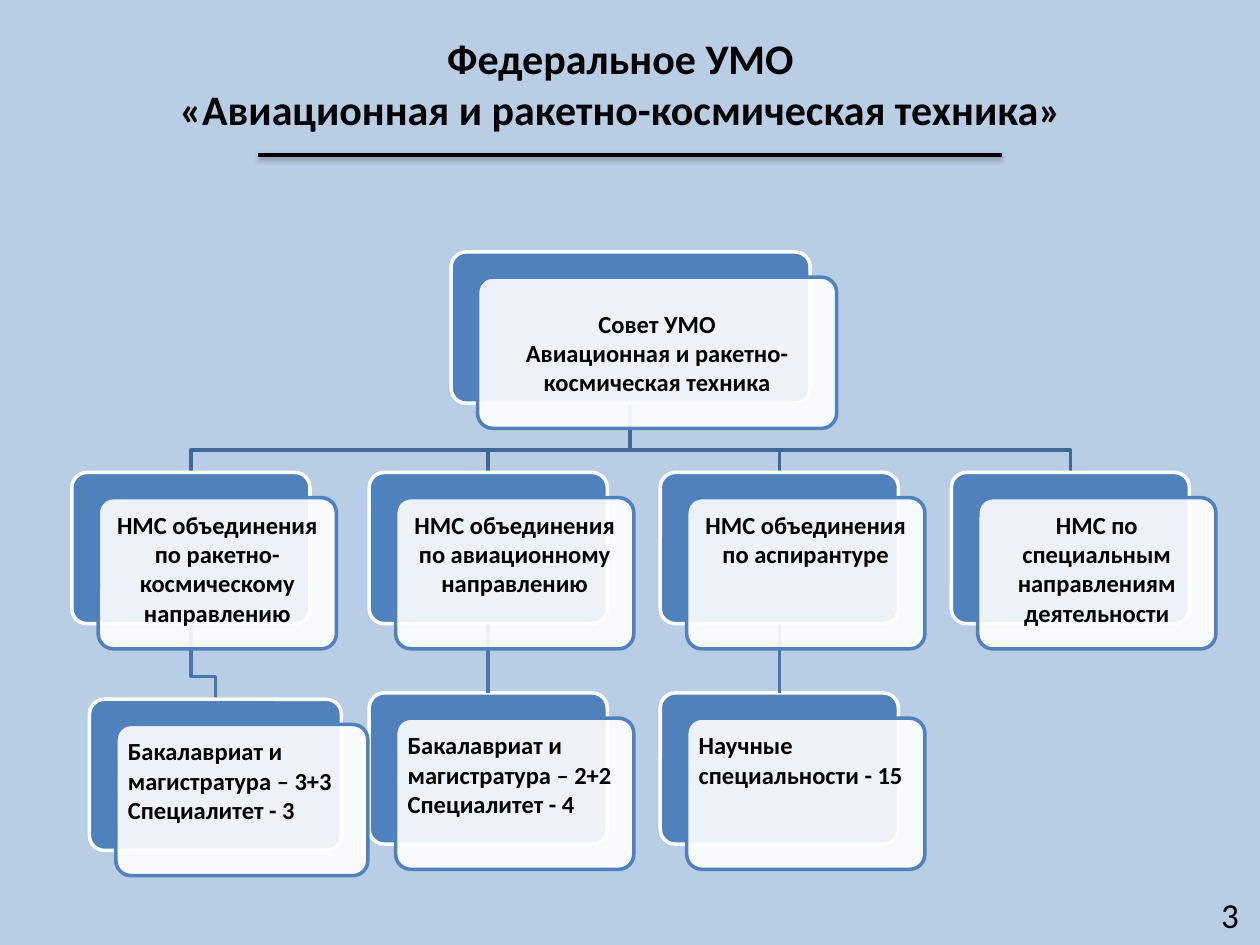
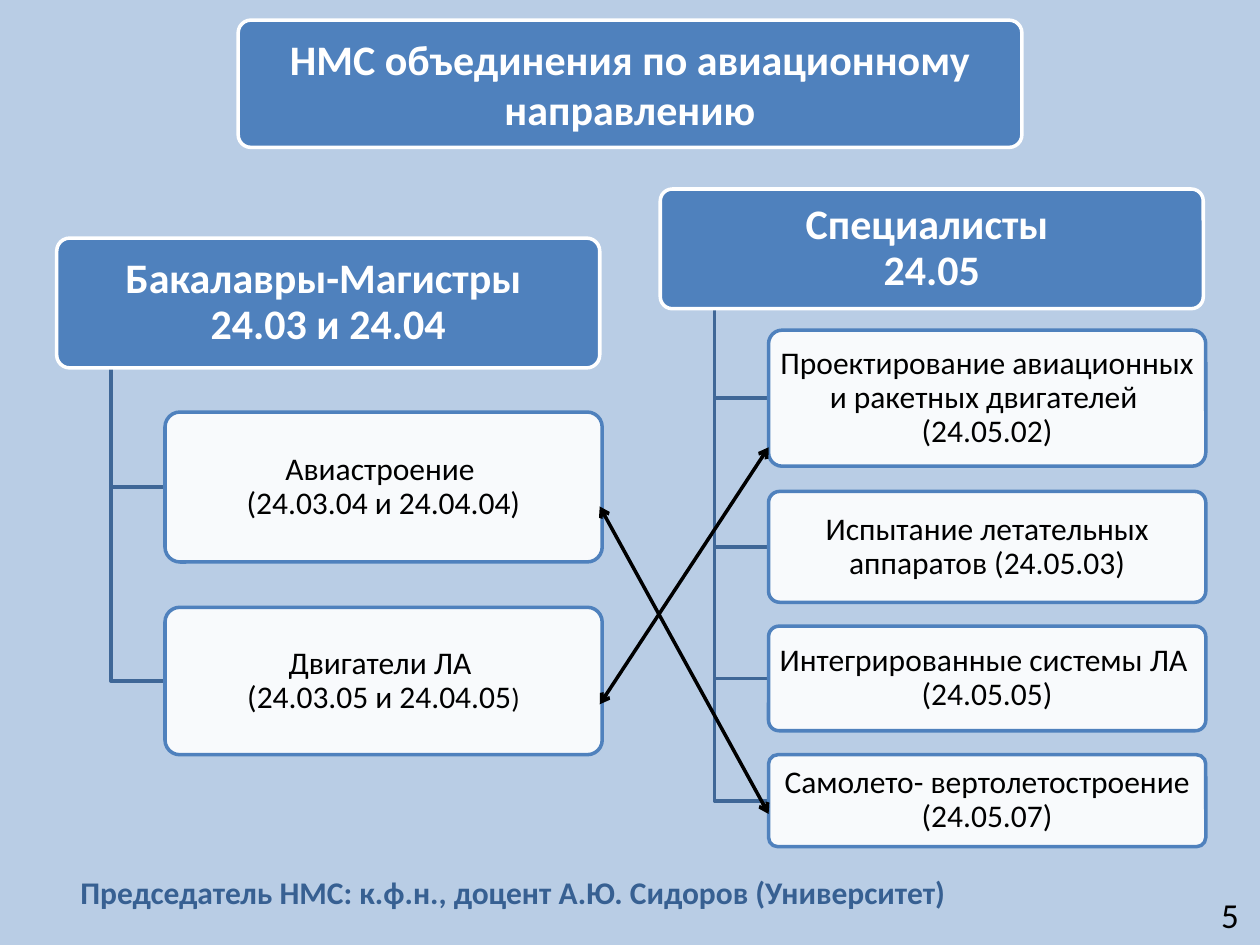
import pptx
import pptx.util
import pptx.oxml
import pptx.oxml.ns
import pptx.dml.color
import pptx.enum.shapes
import pptx.enum.text

Inches, Pt = pptx.util.Inches, pptx.util.Pt
RGB = pptx.dml.color.RGBColor.from_string
ALIGN = pptx.enum.text.PP_ALIGN
ANCHOR = pptx.enum.text.MSO_ANCHOR
STRAIGHT = pptx.enum.shapes.MSO_CONNECTOR.STRAIGHT
NS = pptx.oxml.ns.nsdecls("a")

COLORS = {
    "background": "B9CDE5",
    "blue": "4F81BD",
    "trunk": "3F6797",
    "link": "4875AC",
    "chair": "376092",
    "white": "FFFFFF",
    "black": "000000",
}


def write(s, text, size, color="black", bold=False, align=ALIGN.CENTER,
          anchor=ANCHOR.MIDDLE, inset=(0.1, 0.05), spacing=1.0):
    """Set the text of s; a vertical tab in text is a line break."""
    tf = s.text_frame
    tf.text = text
    tf.word_wrap = True
    tf.vertical_anchor = anchor
    tf.margin_left = tf.margin_right = Inches(inset[0])
    tf.margin_top = tf.margin_bottom = Inches(inset[1])
    p = tf.paragraphs[0]
    p.alignment = align
    p.line_spacing = spacing
    for r in p.runs:
        r.font.name = "Calibri"
        r.font.size = Pt(size)
        r.font.bold = bold
        r.font.color.rgb = RGB(COLORS[color])


def add_box(slide, left, top, width, height, solid):
    """Add a rounded box: solid blue with a white edge, or pale with a blue edge."""
    fill, edge = ("blue", "white") if solid else ("white", "blue")
    s = slide.shapes.add_shape(pptx.enum.shapes.MSO_SHAPE.ROUNDED_RECTANGLE,
                               Inches(left), Inches(top), Inches(width), Inches(height))
    s.adjustments[0] = 0.1
    s.shadow.inherit = False
    s.fill.solid()
    s.fill.fore_color.rgb = RGB(COLORS[fill])
    s.line.color.rgb = RGB(COLORS[edge])
    s.line.width = Pt(2)
    if not solid:
        color = s._element.spPr.find(pptx.oxml.ns.qn("a:solidFill"))[0]
        color.append(pptx.oxml.parse_xml(f'<a:alpha {NS} val="90000"/>'))
    return s


prs = pptx.Presentation()
prs.slide_width, prs.slide_height = Inches(10), Inches(7.5)
structure, aviation = [prs.slides.add_slide(prs.slide_layouts[6]) for _ in range(2)]

# Background and page number
for slide, number in ((structure, "3"), (aviation, "5")):
    slide.background.fill.solid()
    slide.background.fill.fore_color.rgb = RGB(COLORS["background"])
    s = slide.shapes.add_textbox(Inches(7.6), Inches(7.06), Inches(2.33), Inches(0.4))
    write(s, number, 20, align=ALIGN.RIGHT)

# Contents of the structure slide
CARD_W, CARD_H, CARD_SHIFT = 1.89, 1.2, 0.2
COUNCIL_BOTTOM, COUNCIL_TOP, TEAM_TOP = 3.2, 2, 3.75
council = (3.58, COUNCIL_TOP, 2.85, "Совет УМО\vАвиационная и ракетно-космическая техника")
teams = [
    (0.57, "НМС объединения по ракетно-космическому направлению"),
    (2.93, "НМС объединения по авиационному направлению"),
    (5.24, "НМС объединения по аспирантуре"),
    (7.55, "НМС по специальным направлениям деятельности"),
]
programs = [
    (0.71, 5.55, 2, "Бакалавриат и магистратура – 3+3\vСпециалитет - 3"),
    (2.93, 5.5, CARD_W, "Бакалавриат и магистратура – 2+2\vСпециалитет - 4"),
    (5.24, 5.5, CARD_W, "Научные специальности - 15"),
]

# Contents of the aviation slide: header box, then (top, height, text) of its branches
trees = [
    ((5.24, 1.5, 0.95, "Специалисты \v24.05"), [
        (2.62, 1.08, "Проектирование авиационных и ракетных двигателей \v(24.05.02)"),
        (3.9, 0.88, "Испытание летательных аппаратов (24.05.03)"),
        (4.97, 0.83, "Интегрированные системы ЛА \v(24.05.05)"),
        (5.99, 0.73, "Самолето- вертолетостроение (24.05.07)"),
    ]),
    ((0.45, 1.89, 1.03, "Бакалавры-Магистры \v24.03 и 24.04"), [
        (3.27, 1.19, "Авиастроение \v(24.03.04 и 24.04.04)"),
        (4.82, 1.17, "Двигатели ЛА \v(24.03.05 и 24.04.05"),
    ]),
]
HEADER_W, BRANCH_W, TRUNK_X, BRANCH_X = 4.31, 3.47, 0.43, 0.86

# Elbow lines of both slides
elbows = []
for left, _ in teams:
    x = left + CARD_W / 2
    elbows.append((structure, "trunk", [(5, COUNCIL_BOTTOM), (5, 3.57), (x, 3.57), (x, TEAM_TOP)]))
start_x, end_x = teams[0][0] + CARD_W / 2, programs[0][0] + programs[0][2] / 2
elbows.append((structure, "link", [(start_x, TEAM_TOP + CARD_H), (start_x, 5.37),
                                   (end_x, 5.37), (end_x, programs[0][1])]))
for (left, top, height, _), branches in trees:
    x = left + TRUNK_X
    for branch_top, branch_height, _ in branches:
        y = branch_top + branch_height / 2
        elbows.append((aviation, "trunk", [(x, top + height), (x, y), (left + BRANCH_X, y)]))
for slide, color, points in elbows:
    points = [(Inches(x), Inches(y)) for x, y in points]
    builder = slide.shapes.build_freeform(*points[0])
    builder.add_line_segments(points[1:], close=False)
    s = builder.convert_to_shape()
    s.shadow.inherit = False
    s.fill.background()
    s.line.color.rgb = RGB(COLORS[color])
    s.line.width = Pt(2)

# Structure slide: title and rule
s = structure.shapes.add_textbox(Inches(0.91), Inches(0.21), Inches(8.03), Inches(0.91))
write(s, "Федеральное УМО\v«Авиационная и ракетно-космическая техника»", 24, bold=True,
      anchor=ANCHOR.TOP)
rule = structure.shapes.add_connector(STRAIGHT, Inches(2.05), Inches(1.23),
                                      Inches(7.95), Inches(1.23))
rule.line.color.rgb = RGB(COLORS["black"])
rule.line.width = Pt(2)
rule._element.spPr.append(pptx.oxml.parse_xml(
    f'<a:effectLst {NS}><a:outerShdw blurRad="{Pt(3.1)}" dist="{Pt(1.6)}" dir="5400000" '
    f'rotWithShape="0"><a:srgbClr val="{COLORS["black"]}"><a:alpha val="38000"/>'
    '</a:srgbClr></a:outerShdw></a:effectLst>'))

# Structure slide: blue backs, links between them, then pale fronts with the text
cards = [(*council, ALIGN.CENTER, ANCHOR.MIDDLE)]
cards += [(left, TEAM_TOP, CARD_W, text, ALIGN.CENTER, ANCHOR.TOP) for left, text in teams]
cards += [(*program, ALIGN.LEFT, ANCHOR.TOP) for program in programs]
backs = [add_box(structure, left, top, width, CARD_H, True) for left, top, width, *_ in cards]
team_backs, program_backs = backs[1:5], backs[5:]
for column in (1, 2):
    link = structure.shapes.add_connector(STRAIGHT, 0, 0, 0, 0)
    link.begin_connect(team_backs[column], 2)
    link.end_connect(program_backs[column], 0)
    link.line.color.rgb = RGB(COLORS["link"])
    link.line.width = Pt(2)
    link._element.spPr.append(pptx.oxml.parse_xml(f"<a:effectLst {NS}/>"))
for left, top, width, text, align, anchor in cards:
    s = add_box(structure, left + CARD_SHIFT + 0.01, top + CARD_SHIFT, width, CARD_H, False)
    write(s, text, 14, bold=True, align=align, anchor=anchor, inset=(0.06, 0.06))

# Aviation slide: title and two trees
s = add_box(aviation, 1.89, 0.16, 6.22, 1.01, True)
write(s, "НМС объединения по авиационному направлению", 24, "white", True, inset=(0.05, 0.03))
for (left, top, height, text), branches in trees:
    s = add_box(aviation, left, top, HEADER_W, height, True)
    write(s, text, 24, "white", True, inset=(0.05, 0.03), spacing=0.9)
    for branch_top, branch_height, text in branches:
        s = add_box(aviation, left + BRANCH_X, branch_top, BRANCH_W, branch_height, False)
        write(s, text, 18, inset=(0.04, 0.03), spacing=0.9)

# The closing bracket of the last branch is smaller
r = s.text_frame.paragraphs[0].add_run()
r.text = ")"
r.font.name = "Calibri"
r.font.size = Pt(16)
r.font.color.rgb = RGB(COLORS["black"])

# Aviation slide: double arrows between related branches
for start_y, end_y in ((5.59, 3.55), (4.02, 6.46)):
    arrow = aviation.shapes.add_connector(STRAIGHT, Inches(4.76), Inches(start_y),
                                          Inches(6.1), Inches(end_y))
    arrow.line.color.rgb = RGB(COLORS["black"])
    arrow.line.width = Pt(2)
    for end in ("headEnd", "tailEnd"):
        arrow.line._ln.append(pptx.oxml.parse_xml(f'<a:{end} {NS} type="arrow"/>'))
    arrow._element.spPr.append(pptx.oxml.parse_xml(f"<a:effectLst {NS}/>"))

s = aviation.shapes.add_textbox(Inches(0.54), Inches(6.88), Inches(8.98), Inches(0.4))
write(s, "Председатель НМС: к.ф.н., доцент А.Ю. Сидоров (Университет)", 18, "chair", True,
      align=ALIGN.LEFT, anchor=ANCHOR.TOP)

prs.save("out.pptx")
